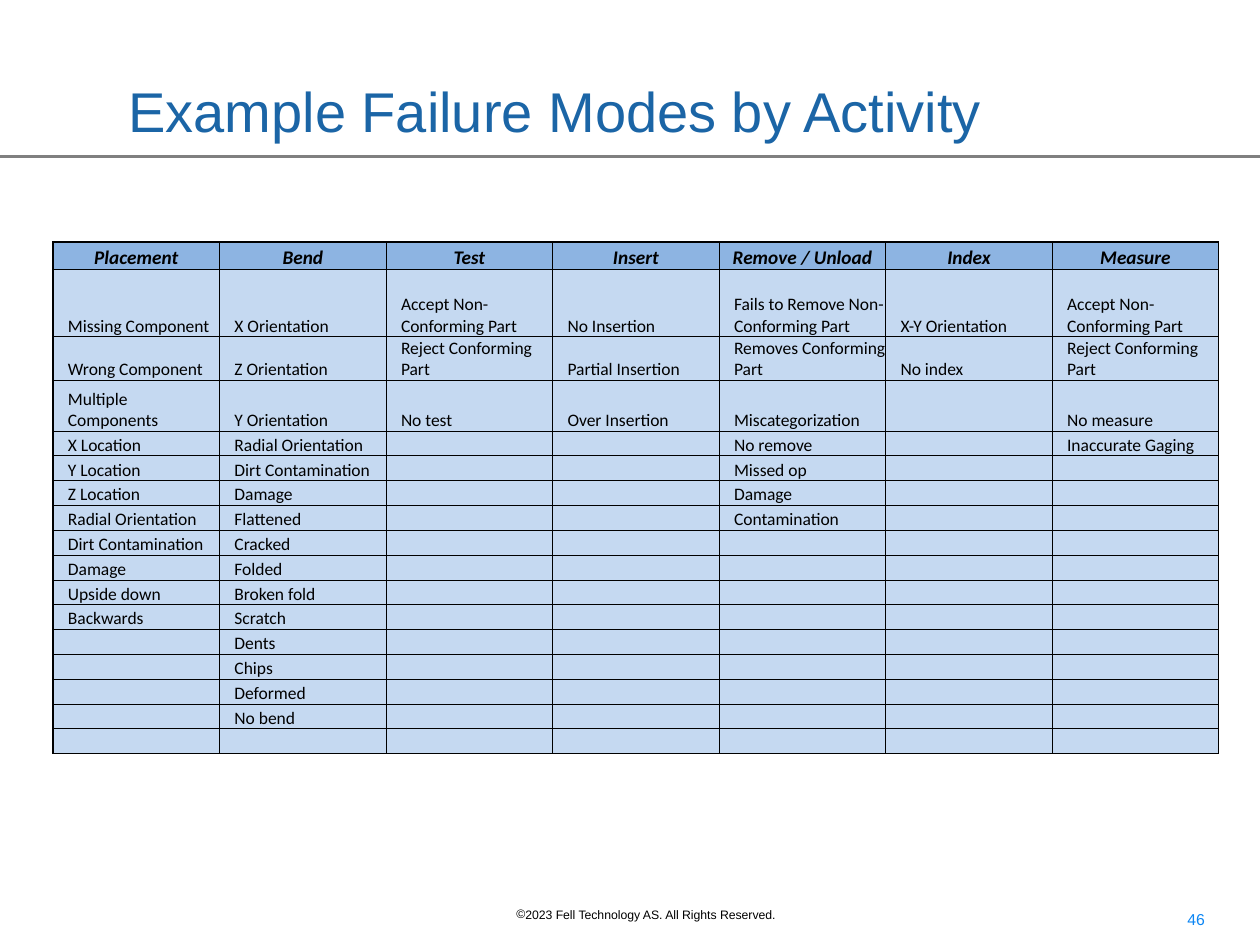
from itertools import zip_longest

from lxml import etree
from pptx import Presentation
from pptx.dml.color import RGBColor
from pptx.enum import shapes, text
from pptx.oxml import ns
from pptx.util import Cm, Pt

COLUMNS = {
    "Placement": ["Missing Component", "Wrong Component", "Multiple Components",
                  "X Location", "Y Location", "Z Location", "Radial Orientation",
                  "Dirt Contamination", "Damage", "Upside down", "Backwards"],
    "Bend": ["X Orientation", "Z Orientation", "Y Orientation", "Radial Orientation",
             "Dirt Contamination", "Damage", "Flattened", "Cracked", "Folded",
             "Broken fold", "Scratch", "Dents", "Chips", "Deformed", "No bend"],
    "Test": ["Accept Non-Conforming Part", "Reject Conforming Part", "No test"],
    "Insert": ["No Insertion", "Partial Insertion", "Over Insertion"],
    "Remove / Unload": ["Fails to Remove Non-Conforming Part",
                        "Removes Conforming Part", "Miscategorization",
                        "No remove", "Missed op", "Damage", "Contamination"],
    "Index": ["X-Y Orientation", "No index"],
    "Measure": ["Accept Non-Conforming Part", "Reject Conforming Part",
                "No measure", "Inaccurate Gaging"],
}
ROW_HEIGHTS = [0.55, 1.36, 0.87, 1.03] + [0.5] * 13


def color(value):
    return RGBColor.from_string(value)


def add_child(parent, tag, **attrs):
    return etree.SubElement(parent, ns.qn(tag), attrs)


def style_run(r, size, name, value, strong=False):
    r.font.size = Pt(size)
    r.font.name = name
    r.font.color.rgb = color(value)
    r.font.bold = r.font.italic = strong


def add_label(s, box, words, size, value, align=text.PP_ALIGN.LEFT,
              anchor=text.MSO_ANCHOR.TOP, wrap=True):
    tf = s.shapes.add_textbox(*map(Cm, box)).text_frame
    tf.word_wrap = wrap
    tf.vertical_anchor = anchor
    p = tf.paragraphs[0]
    p.text = words
    p.alignment = align
    style_run(p.runs[0], size, "Arial", value)
    return p


def add_heading(s, left, top, width, height):
    p = add_label(s, (left + 2.34, top, width - 3.38, height - 0.1),
                  "Example Failure Modes by Activity", 32, "1B65A6",
                  anchor=text.MSO_ANCHOR.BOTTOM)
    p.line_spacing = 0.9
    y = Cm(top + height)
    rule = s.shapes.add_connector(shapes.MSO_CONNECTOR.STRAIGHT,
                                  Cm(left), y, Cm(left + width), y)
    rule.line.color.rgb = color("808080")
    rule.line.width = Pt(1.5)
    add_child(rule._element.spPr, "a:effectLst")


def set_borders(cell, widths):
    tcPr = cell._tc.get_or_add_tcPr()
    for i, (side, width) in enumerate(widths.items()):
        ln = etree.Element(ns.qn(f"a:ln{side}"), w=str(Pt(width)))
        fill = add_child(ln, "a:solidFill")
        add_child(fill, "a:srgbClr", val="000000")
        tcPr.insert(i, ln)


def fill_cell(cell, words, row, column):
    header = row == 0
    cell.fill.solid()
    cell.fill.fore_color.rgb = color("8DB4E2" if header else "C5D9F1")
    cell.vertical_anchor = text.MSO_ANCHOR.BOTTOM
    cell.margin_left = Cm(0 if header else 0.3)
    cell.margin_right = cell.margin_top = cell.margin_bottom = 0
    set_borders(cell, {"L": 1 if column == 0 else 0.5, "R": 0.5,
                       "T": 1 if row < 2 else 0.5, "B": 1 if header else 0.5})
    p = cell.text_frame.paragraphs[0]
    if words:
        p.text = words
        p.alignment = text.PP_ALIGN.CENTER if header else text.PP_ALIGN.LEFT
        style_run(p.runs[0], 11 if header else 10, "Calibri", "000000", header)
    else:
        add_child(p._p, "a:endParaRPr", sz="1000")


def add_modes_table(s, left, top, width):
    rows = [list(COLUMNS), *zip_longest(*COLUMNS.values(), fillvalue="")]
    rows.append([""] * len(COLUMNS))
    table = s.shapes.add_table(len(rows), len(COLUMNS), Cm(left), Cm(top),
                               Cm(width), Cm(sum(ROW_HEIGHTS))).table
    for column in table.columns:
        column.width = Cm(width / len(COLUMNS))
    for i, (height, row) in enumerate(zip(ROW_HEIGHTS, rows)):
        table.rows[i].height = Cm(height)
        for j, words in enumerate(row):
            fill_cell(table.cell(i, j), words, i, j)


def add_footer(s, left, top, width):
    add_label(s, (left + width - 6.78, top + 0.05, 5.92, 0.8), "46", 9, "0C86F4",
              align=text.PP_ALIGN.RIGHT)
    p = add_label(s, (left + 10.16, top, 5.87, 0.56),
                  "2023 Fell Technology AS. All Rights Reserved.", 7, "000000",
                  wrap=False)
    pPr = p._p.get_or_add_pPr()
    pPr.set("marL", "0")
    pPr.set("indent", "0")
    add_child(pPr, "a:buFont", typeface="Arial")
    add_child(pPr, "a:buChar", char="©")


def main():
    prs = Presentation()
    prs.slide_width, prs.slide_height = Cm(25.4), Cm(19.05)
    s = prs.slides.add_slide(prs.slide_layouts[6])
    add_heading(s, 0, 0, 25.4, 3.15)
    add_modes_table(s, 1.07, 4.88, 23.5)
    add_footer(s, 0, 18.16, 25.4)
    prs.save("out.pptx")


if __name__ == "__main__":
    main()
